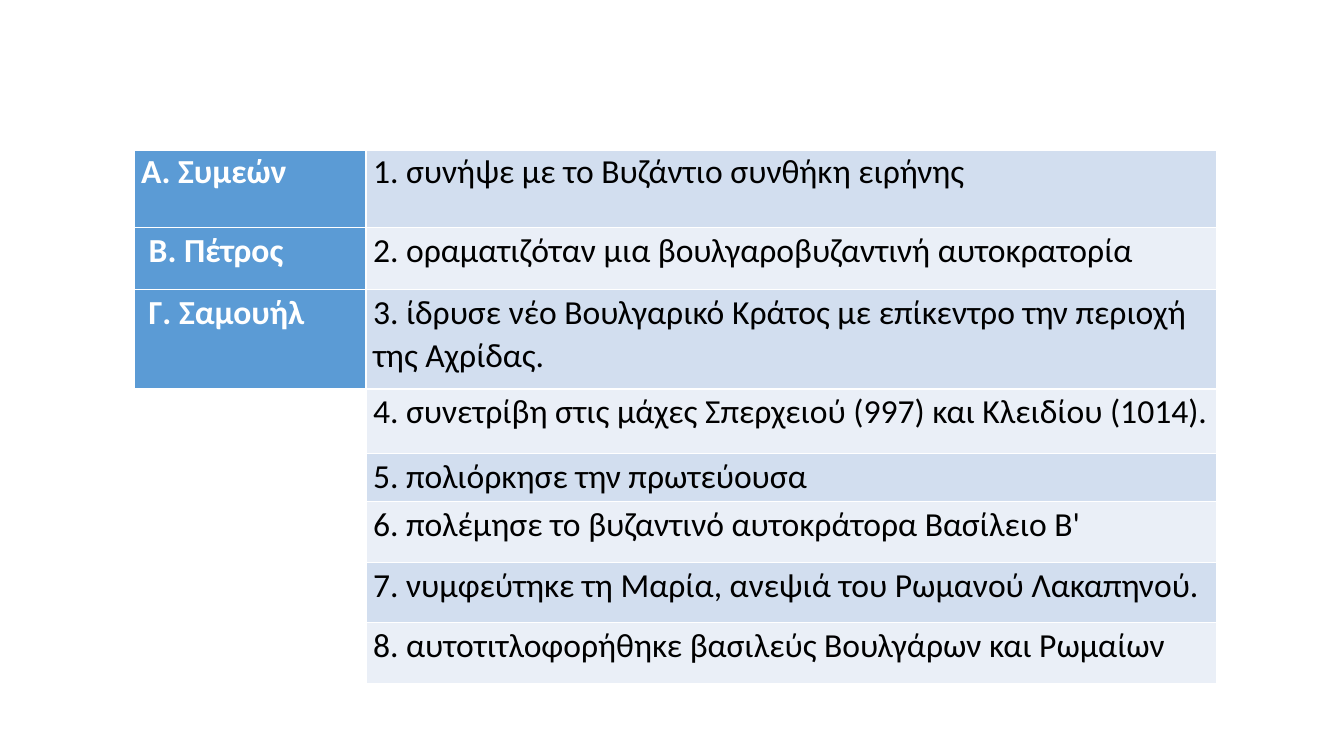
from lxml import etree
from pptx import Presentation
from pptx.dml.color import RGBColor
from pptx.oxml.ns import qn
from pptx.util import Inches, Pt

THEME = {
    "font": "Calibri",
    "size": Pt(24),
    "line_spacing": 1.07,
    "ruler": "5B9BD5",
    "bands": ("D2DEEF", "EAEFF7"),
    "ruler_text": "FFFFFF",
    "event_text": "000000",
    "border": "FFFFFF",
}
COLUMN_WIDTHS = (2.3, 8.44)
ROW_HEIGHTS = (0.6, 0.78, 0.61, 0.99, 0.64, 0.48, 0.6, 0.6, 0.6)

RULERS = ("Α. Συμεών", " Β. Πέτρος", " Γ. Σαμουήλ")
EVENTS = (
    "1. συνήψε με το Βυζάντιο συνθήκη ειρήνης",
    "2. οραματιζόταν μια βουλγαροβυζαντινή αυτοκρατορία",
    "3. ίδρυσε νέο Βουλγαρικό Κράτος με επίκεντρο την περιοχή της Αχρίδας.",
    "4. συνετρίβη στις μάχες Σπερχειού (997) και Κλειδίου (1014).",
    "5. πολιόρκησε την πρωτεύουσα",
    "6. πολέμησε το βυζαντινό αυτοκράτορα Βασίλειο Β'",
    "7. νυμφεύτηκε τη Μαρία, ανεψιά του Ρωμανού Λακαπηνού.",
    "8. αυτοτιτλοφορήθηκε βασιλεύς Βουλγάρων και Ρωμαίων",
)


def write_cell(cell, text, fill, color, bold):
    cell.margin_left = cell.margin_right = Inches(0.07)
    cell.margin_top = cell.margin_bottom = 0
    cell.fill.solid()
    cell.fill.fore_color.rgb = RGBColor.from_string(fill)
    cell.text_frame.text = text
    paragraph = cell.text_frame.paragraphs[0]
    paragraph.line_spacing = THEME["line_spacing"]
    font = paragraph.runs[0].font
    font.name = THEME["font"]
    font.size = THEME["size"]
    font.bold = bold
    font.color.rgb = RGBColor.from_string(color)


def set_borders(cell, top, bottom):
    """Draw all four cell borders; top and bottom are widths in points."""
    properties = cell._tc.get_or_add_tcPr()
    widths = {"a:lnL": 1, "a:lnR": 1, "a:lnT": top, "a:lnB": bottom}
    for position, (tag, width) in enumerate(widths.items()):
        line = etree.Element(qn(tag), w=str(Pt(width)))
        fill = etree.SubElement(line, qn("a:solidFill"))
        etree.SubElement(fill, qn("a:srgbClr"), val=THEME["border"])
        properties.insert(position, line)


presentation = Presentation()
presentation.slide_width = Inches(13.33)
presentation.slide_height = Inches(7.5)
slide = presentation.slides.add_slide(presentation.slide_layouts[6])

table = slide.shapes.add_table(
    len(ROW_HEIGHTS), len(COLUMN_WIDTHS), Inches(1.33), Inches(0.88),
    Inches(sum(COLUMN_WIDTHS)), Inches(sum(ROW_HEIGHTS)),
).table
table.first_row = False
table.horz_banding = False
for column, width in zip(table.columns, COLUMN_WIDTHS):
    column.width = Inches(width)
for row, height in zip(table.rows, ROW_HEIGHTS):
    row.height = Inches(height)

for row_index, row in enumerate(table.rows):
    for cell in row.cells:
        cell.fill.background()
        set_borders(cell, top=3 if row_index == 1 else 1, bottom=3 if row_index == 0 else 1)

for row_index, ruler in enumerate(RULERS, start=1):
    write_cell(table.cell(row_index, 0), ruler, THEME["ruler"], THEME["ruler_text"], True)
for row_index, event in enumerate(EVENTS, start=1):
    band = THEME["bands"][(row_index - 1) % 2]
    write_cell(table.cell(row_index, 1), event, band, THEME["event_text"], False)

table.cell(len(RULERS) + 1, 0).merge(table.cell(len(EVENTS), 0))

presentation.save("out.pptx")
